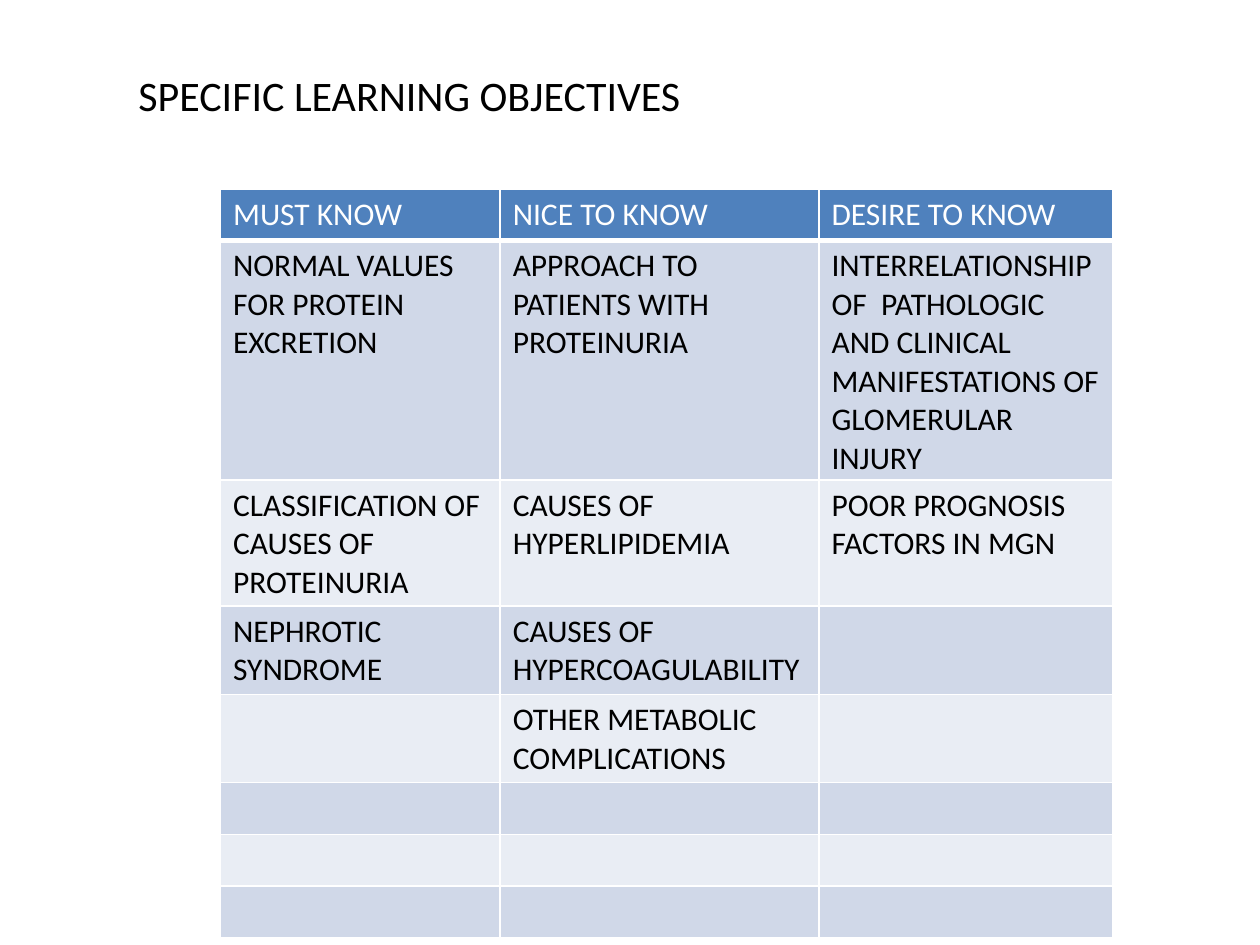
from dataclasses import dataclass

from lxml import etree
from pptx import Presentation
from pptx import util as u
from pptx.dml.color import RGBColor
from pptx.enum import text
from pptx.oxml import ns


@dataclass(frozen=True)
class Theme:
    font: str = "Calibri"
    title_size: int = 24
    body_size: int = 18
    ink: str = "000000"
    paper: str = "FFFFFF"
    header: str = "4F81BD"
    bands: tuple = ("D0D8E8", "E9EDF4")
    rule: float = 1
    header_rule: float = 3


THEME = Theme()

COLUMN_WIDTHS = (2.22, 2.53, 2.33)
ROW_HEIGHT = 0.41
OBJECTIVES = [
    ("MUST KNOW", "NICE TO KNOW", "DESIRE TO KNOW"),
    ("NORMAL VALUES FOR PROTEIN EXCRETION",
     "APPROACH TO PATIENTS WITH PROTEINURIA",
     "INTERRELATIONSHIP OF  PATHOLOGIC AND CLINICAL "
     "MANIFESTATIONS OF GLOMERULAR INJURY"),
    ("CLASSIFICATION OF CAUSES OF PROTEINURIA",
     "CAUSES OF HYPERLIPIDEMIA",
     "POOR PROGNOSIS FACTORS IN MGN"),
    ("NEPHROTIC SYNDROME", "CAUSES OF HYPERCOAGULABILITY", ""),
    ("", "OTHER METABOLIC COMPLICATIONS", ""),
] + [("", "", "")] * 3


def write(paragraph, wording, size, color):
    paragraph.text = wording
    font = paragraph.font
    if paragraph.runs:
        font = paragraph.runs[0].font
    style = {"name": THEME.font, "size": u.Pt(size), "bold": False}
    for key, value in style.items():
        setattr(font, key, value)
    font.color.rgb = RGBColor.from_string(color)


def add_title(slide, wording):
    title = slide.shapes.add_textbox(
        u.Inches(1), u.Inches(0.5), u.Inches(7), u.Inches(0.5))
    frame = title.text_frame
    layout = {"word_wrap": True, "auto_size": text.MSO_AUTO_SIZE.SHAPE_TO_FIT_TEXT}
    for key, value in layout.items():
        setattr(frame, key, value)
    write(frame.paragraphs[0], wording, THEME.title_size, THEME.ink)


def add_borders(cell, widths):
    properties = cell._tc.get_or_add_tcPr()
    for side, width in widths.items():
        line = etree.SubElement(properties, ns.qn(f"a:ln{side}"), w=str(u.Pt(width)))
        fill = etree.SubElement(line, ns.qn("a:solidFill"))
        etree.SubElement(fill, ns.qn("a:srgbClr"), val=THEME.paper)


def fill_cell(cell, wording, is_header, above_rule, band):
    below_rule = THEME.header_rule if is_header else THEME.rule
    add_borders(cell, {"L": THEME.rule, "R": THEME.rule,
                       "T": above_rule, "B": below_rule})
    cell.fill.solid()
    cell.fill.fore_color.rgb = RGBColor.from_string(band)
    write(cell.text_frame.paragraphs[0], wording, THEME.body_size,
          THEME.paper if is_header else THEME.ink)


def add_objectives(slide, rows):
    table = slide.shapes.add_table(
        len(rows), len(COLUMN_WIDTHS), u.Inches(1.75), u.Inches(1.5),
        u.Inches(sum(COLUMN_WIDTHS)), u.Inches(ROW_HEIGHT * len(rows))).table
    for column, width in zip(table.columns, COLUMN_WIDTHS):
        column.width = u.Inches(width)
    for r, wordings in enumerate(rows):
        table.rows[r].height = u.Inches(ROW_HEIGHT)
        band = THEME.bands[(r - 1) % 2] if r else THEME.header
        above_rule = THEME.header_rule if r == 1 else THEME.rule
        for c, wording in enumerate(wordings):
            fill_cell(table.cell(r, c), wording, r == 0, above_rule, band)


def main():
    deck = Presentation()
    deck.slide_width, deck.slide_height = u.Inches(10), u.Inches(7.5)
    slide = deck.slides.add_slide(deck.slide_layouts[6])

    # Heading
    add_title(slide, "SPECIFIC LEARNING OBJECTIVES")

    # Objectives by priority
    add_objectives(slide, OBJECTIVES)

    deck.save("out.pptx")


if __name__ == "__main__":
    main()
